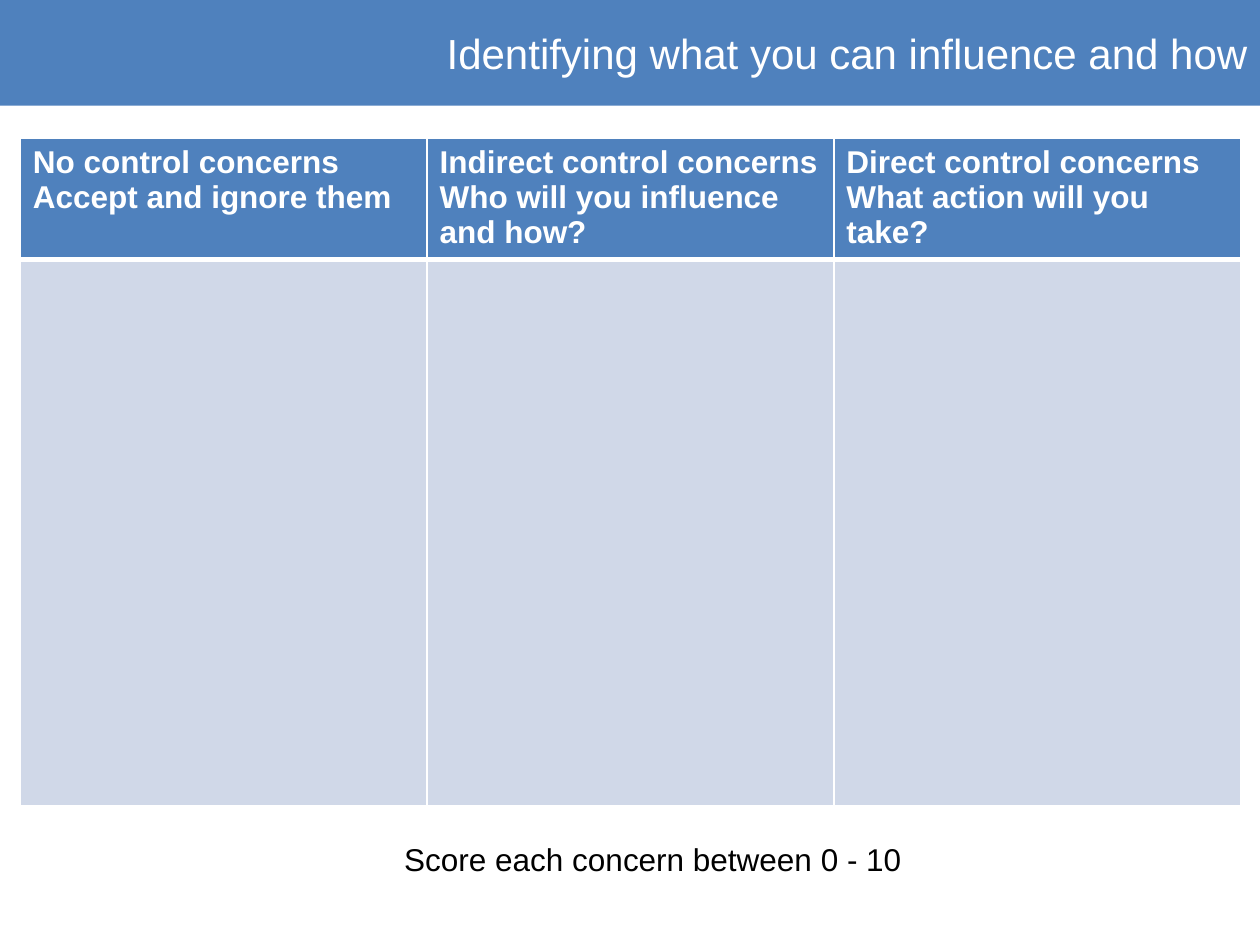
"""Build a worksheet slide for sorting concerns by degree of control."""
from dataclasses import dataclass

import lxml.etree
import pptx
import pptx.dml.color
import pptx.enum.shapes
import pptx.enum.text
import pptx.oxml.ns
import pptx.util
from pptx.util import Cm

COLORS = {"blue": "4F81BD", "pale": "D0D8E8", "white": "FFFFFF", "black": "000000"}
COLUMN_WIDTH = Cm(8.2)
ROW_HEIGHTS = (Cm(2.44), Cm(11.02))


@dataclass(frozen=True)
class Concern:
    kind: str
    response: str


CONCERNS = (
    Concern("No control concerns", "Accept and ignore them"),
    Concern("Indirect control concerns", "Who will you influence and how?"),
    Concern("Direct control concerns", "What action will you take?"),
)


def color(name: str) -> pptx.dml.color.RGBColor:
    return pptx.dml.color.RGBColor.from_string(COLORS[name])


def write(text_frame, lines: tuple[str, ...], size: int, color_name: str, bold: bool = False) -> None:
    text_frame.text = "\n".join(lines)
    font_format = {"name": "Arial", "size": pptx.util.Pt(size), "bold": bold}
    for paragraph in text_frame.paragraphs:
        for run in paragraph.runs:
            for attribute, value in font_format.items():
                setattr(run.font, attribute, value)
            run.font.color.rgb = color(color_name)


def format_cell(cell, fill_name: str, border_points: dict[str, int]) -> None:
    qualified = pptx.oxml.ns.qn
    properties = cell._tc.get_or_add_tcPr()
    for side, points in border_points.items():
        width = str(pptx.util.Pt(points))
        line = lxml.etree.SubElement(properties, qualified(f"a:ln{side}"), w=width)
        fill = lxml.etree.SubElement(line, qualified("a:solidFill"))
        lxml.etree.SubElement(fill, qualified("a:srgbClr"), val=COLORS["white"])
    cell.fill.solid()
    cell.fill.fore_color.rgb = color(fill_name)


def add_banner(slide, width: int) -> None:
    banner = slide.shapes.add_shape(
        pptx.enum.shapes.MSO_SHAPE.RECTANGLE, 0, 0, width, Cm(2.13))
    banner.shadow.inherit = False
    banner.fill.solid()
    banner.fill.fore_color.rgb = color("blue")
    banner.line.fill.background()
    write(banner.text_frame, ("Identifying what you can influence and how",), 24, "white")
    banner.text_frame.vertical_anchor = pptx.enum.text.MSO_ANCHOR.MIDDLE
    banner.text_frame.paragraphs[0].alignment = pptx.enum.text.PP_ALIGN.RIGHT


def add_concerns_table(slide, concerns: tuple[Concern, ...]) -> None:
    table = slide.shapes.add_table(
        len(ROW_HEIGHTS), len(concerns), Cm(0.41), Cm(2.79),
        COLUMN_WIDTH * len(concerns), sum(ROW_HEIGHTS)).table
    for row, height in zip(table.rows, ROW_HEIGHTS):
        row.height = height
    for index, concern in enumerate(concerns):
        table.columns[index].width = COLUMN_WIDTH
        header, body = table.cell(0, index), table.cell(1, index)
        write(header.text_frame, (concern.kind, concern.response), 18, "white", bold=True)
        format_cell(header, "blue", {"L": 1, "R": 1, "T": 1, "B": 3})
        format_cell(body, "pale", {"L": 1, "R": 1, "T": 3, "B": 1})


def add_scoring_note(slide) -> None:
    note = slide.shapes.add_textbox(Cm(7.9), Cm(16.81), Cm(10.62), Cm(1.02))
    frame_format = {
        "word_wrap": False,
        "auto_size": pptx.enum.text.MSO_AUTO_SIZE.SHAPE_TO_FIT_TEXT,
    }
    for attribute, value in frame_format.items():
        setattr(note.text_frame, attribute, value)
    write(note.text_frame, ("Score each concern between 0 - 10",), 18, "black")


def main() -> None:
    presentation = pptx.Presentation()
    presentation.slide_width, presentation.slide_height = Cm(25.4), Cm(19.05)
    slide = presentation.slides.add_slide(presentation.slide_layouts[6])
    add_banner(slide, presentation.slide_width)
    add_concerns_table(slide, CONCERNS)
    add_scoring_note(slide)
    presentation.save("out.pptx")


if __name__ == "__main__":
    main()
